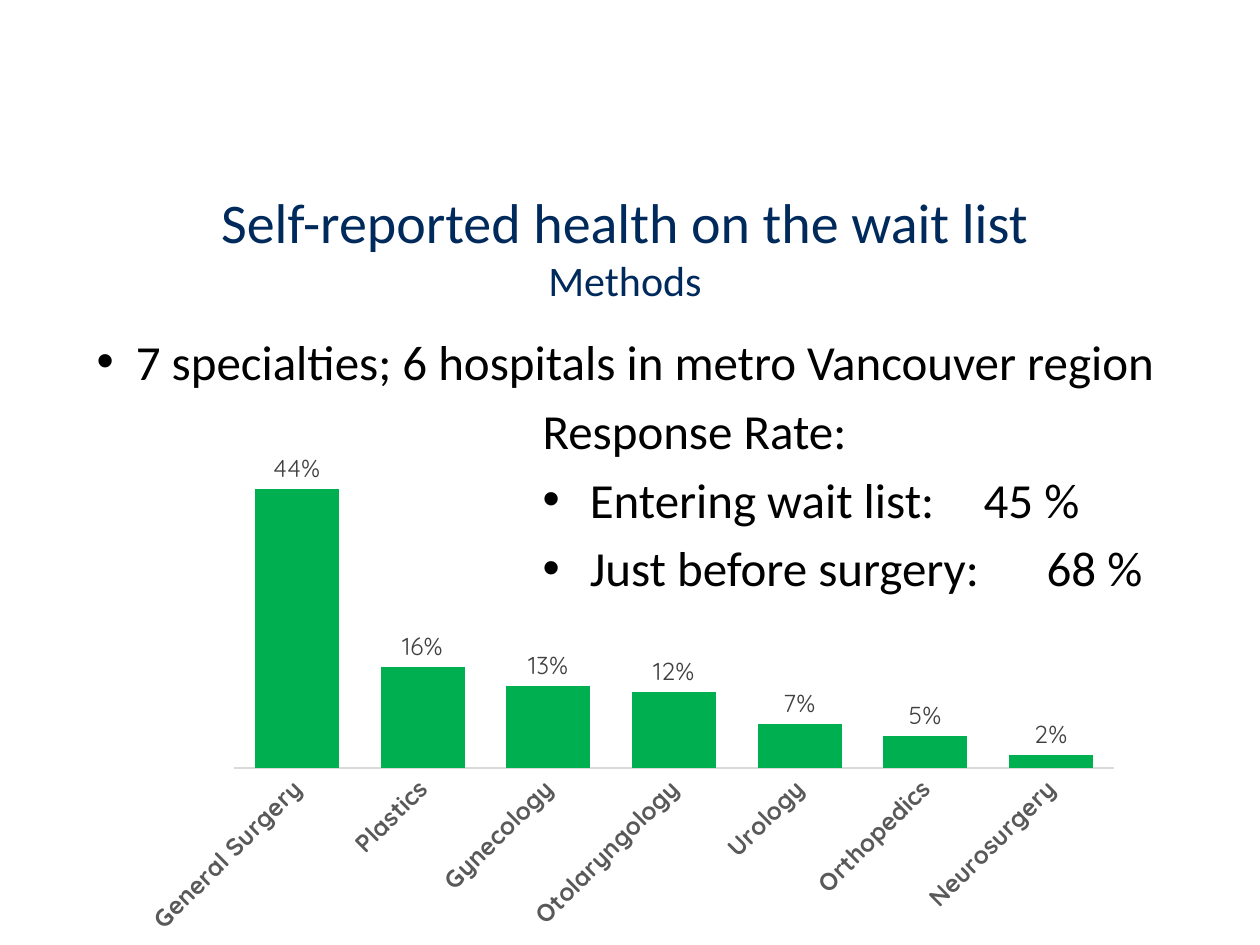
from pptx import Presentation
from pptx.chart.data import CategoryChartData
from pptx.dml.color import RGBColor
from pptx.enum.chart import XL_CHART_TYPE, XL_LABEL_POSITION, XL_TICK_MARK
from pptx.enum.text import MSO_ANCHOR, PP_ALIGN
from pptx.oxml.ns import qn
from pptx.util import Cm, Pt
from lxml.etree import SubElement

COLORS = {"navy": "002A5C", "black": "000000", "green": "00B050",
          "axis": "595959", "label": "404040", "line": "D9D9D9"}


def style(font, size, color, name="Calibri", bold=False):
    font.size, font.name, font.bold = Pt(size), name, bold
    font.color.rgb = RGBColor.from_string(COLORS[color])


def add_lines(box, lines, indent):
    """Fill a box with (text, bulleted) lines; indent is the hang in cm."""
    frame = box.text_frame
    frame.word_wrap = True
    for i, (text, bullet) in enumerate(lines):
        para = frame.paragraphs[0] if i == 0 else frame.add_paragraph()
        if i:
            para.space_before = Pt(5.6)
        if bullet:
            props = para._p.get_or_add_pPr()
            props.set("marL", str(Cm(indent)))
            props.set("indent", str(-Cm(indent)))
            SubElement(props, qn("a:buFont"), typeface="Arial")
            SubElement(props, qn("a:buChar"), char="•")
        run = para.add_run()
        run.text = text
        style(run.font, 28, "black")


deck = Presentation()
deck.slide_width, deck.slide_height = Cm(25.4), Cm(19.05)
slide = deck.slides.add_slide(deck.slide_layouts[5])
shapes = slide.shapes

# Title
title = shapes.title
title.left, title.top, title.width, title.height = Cm(1.07), Cm(4.01), Cm(23.06), Cm(1.9)
title.text_frame.vertical_anchor = MSO_ANCHOR.MIDDLE
head = title.text_frame.paragraphs[0]
head.alignment = PP_ALIGN.CENTER
for i, (text, size) in enumerate([("Self-reported health on the wait list", 32),
                                  ("Methods", 24)]):
    if i:
        head.add_line_break()
    run = head.add_run()
    run.text = text
    style(run.font, size, "navy")

# Scope of the study
scope = shapes.add_textbox(Cm(1.7), Cm(6.55), Cm(22.02), Cm(1.45))
add_lines(scope, [("7 specialties; 6 hospitals in metro Vancouver region", True)], 0.79)

# Share of patients by specialty
data = CategoryChartData(number_format="0%")
data.categories = ["General Surgery", "Plastics", "Gynecology", "Otolaryngology",
                   "Urology", "Orthopedics", "Neurosurgery"]
data.add_series("Series 1", [0.44, 0.16, 0.13, 0.12, 0.07, 0.05, 0.02])
chart = shapes.add_chart(XL_CHART_TYPE.COLUMN_CLUSTERED, Cm(2.54), Cm(8.89),
                         Cm(20.32), Cm(10.16), data).chart
style(chart.font, 14, "black", "Quicksand")
chart.has_legend = chart.has_title = False

values = chart.value_axis
values.visible = values.has_major_gridlines = False
values.minimum_scale, values.maximum_scale = 0, 0.5

cats = chart.category_axis
cats.major_tick_mark = cats.minor_tick_mark = XL_TICK_MARK.NONE
style(cats.tick_labels.font, 14, "axis", "Quicksand", True)
cats._element.find(qn("c:txPr")).find(qn("a:bodyPr")).set("rot", "-2700000")
cats.format.line.color.rgb = RGBColor.from_string(COLORS["line"])
cats.format.line.width = Pt(0.75)

plot = chart.plots[0]
plot.gap_width, plot.overlap, plot.vary_by_categories = 50, -27, False
bars = plot.series[0].format.fill
bars.solid()
bars.fore_color.rgb = RGBColor.from_string(COLORS["green"])
plot.has_data_labels = True
labels = plot.data_labels
labels.show_value = True
labels.position = XL_LABEL_POSITION.OUTSIDE_END
labels.number_format, labels.number_format_is_linked = "0%", False
style(labels.font, 14, "label", "Quicksand")

# Response rates
rates = shapes.add_textbox(Cm(10.69), Cm(7.95), Cm(14.07), Cm(4.32))
add_lines(rates, [("Response Rate:", False),
                  ("Entering wait list:\t45 %", True),
                  ("Just before surgery: \t68 %", True)], 0.95)

deck.save("out.pptx")
